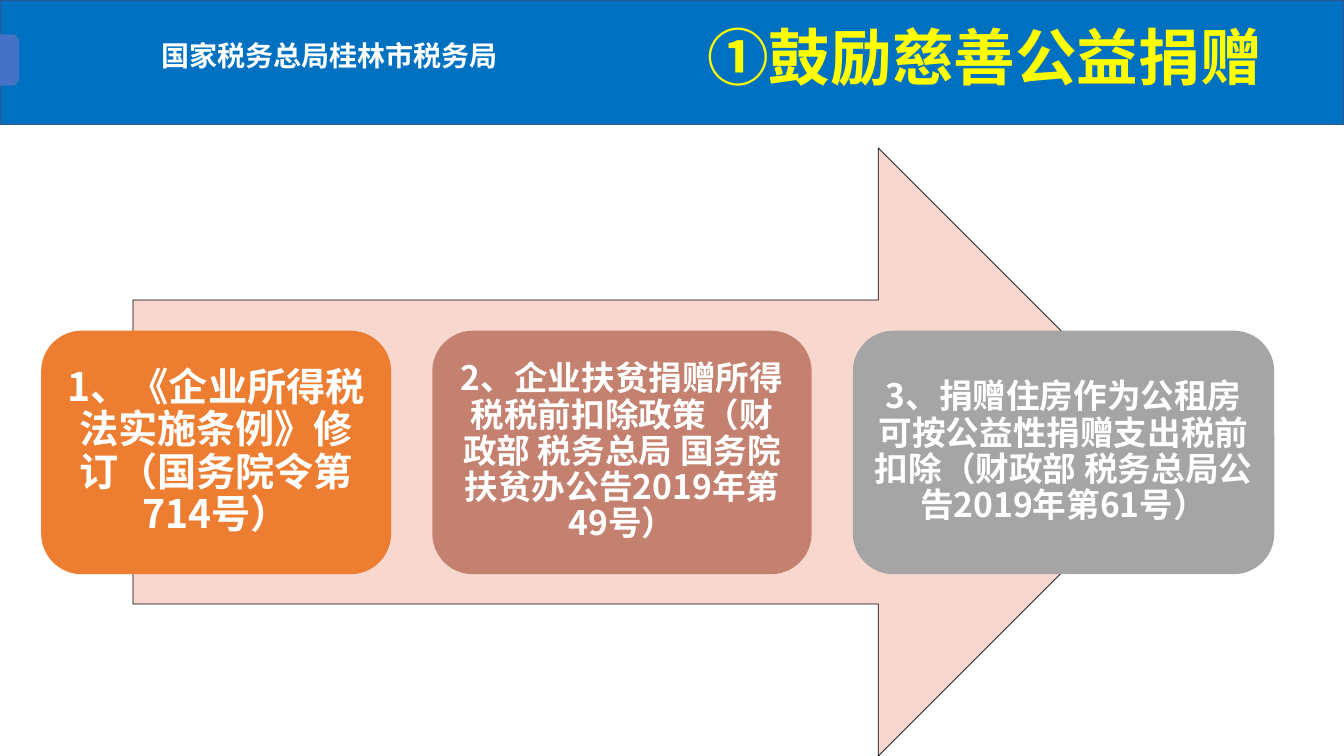
import math
from dataclasses import dataclass

from pptx import Presentation
from pptx.dml.color import RGBColor
from pptx.enum import shapes, text
from pptx.oxml import ns
from pptx.oxml import xmlchemy as xml
from pptx.util import Pt

FONT = "Noto Sans CJK SC"


@dataclass
class Box:
    left: float
    top: float
    width: float
    height: float

    def emu(self) -> tuple:
        return Pt(self.left), Pt(self.top), Pt(self.width), Pt(self.height)


@dataclass
class Policy:
    wording: str
    width: float
    size: float
    fill: str


POLICIES = [
    Policy("1、《企业所得税法实施条例》修订（国务院令第714号）", 250, 28, "ED7D31"),
    Policy("2、企业扶贫捐赠所得税税前扣除政策（财政部 税务总局 国务院扶贫办公告2019年第49号）",
           271, 24, "C48170"),
    Policy("3、捐赠住房作为公租房可按公益性捐赠支出税前扣除（财政部 税务总局公告2019年第61号）",
           301, 24, "A5A5A5"),
]
CARD_GAP = 29.4
CARD_TOP = 236.2
CARD_HEIGHT = 174


def color(value: str) -> RGBColor:
    return RGBColor.from_string(value)


def paint(shape, fill: str, line: str = "", weight: float = 0) -> None:
    shape.shadow.inherit = False
    shape.fill.solid()
    shape.fill.fore_color.rgb = color(fill)
    if line:
        shape.line.color.rgb = color(line)
        shape.line.width = Pt(weight)
    else:
        shape.line.fill.background()


def add_preset(slide, kind, box: Box, fill: str, line: str = "", weight: float = 0):
    shape = slide.shapes.add_shape(kind, *box.emu())
    paint(shape, fill, line, weight)
    return shape


def write(shape, wording: str, size: float, ink: str, align, spacing: float = 1,
          inset: tuple = (7.2, 3.6), wrap: bool = True) -> None:
    frame = shape.text_frame
    frame.word_wrap = wrap
    frame.auto_size = text.MSO_AUTO_SIZE.NONE
    frame.vertical_anchor = text.MSO_ANCHOR.MIDDLE
    frame.margin_left = frame.margin_right = Pt(inset[0])
    frame.margin_top = frame.margin_bottom = Pt(inset[1])
    paragraph = frame.paragraphs[0]
    paragraph.alignment = align
    paragraph.line_spacing = spacing
    paragraph.space_before = Pt(0)
    run = paragraph.add_run()
    run.text = wording
    run.font.size = Pt(size)
    run.font.bold = True
    run.font.name = FONT
    run.font.color.rgb = color(ink)
    east_asian = xml.OxmlElement("a:ea")
    east_asian.set("typeface", FONT)
    run.font._element.find(ns.qn("a:latin")).addnext(east_asian)


def add_tab(slide, box: Box, radius: float, fill: str) -> None:
    right, bottom = box.left + box.width, box.top + box.height
    outline = []
    for center_y, start in ((box.top + radius, -90), (bottom - radius, 0)):
        for angle in range(start, start + 91, 15):
            turn = math.radians(angle)
            outline.append((Pt(right - radius + radius * math.cos(turn)),
                            Pt(center_y + radius * math.sin(turn))))
    builder = slide.shapes.build_freeform(Pt(box.left), Pt(box.top))
    builder.add_line_segments(outline + [(Pt(box.left), Pt(bottom))], close=True)
    paint(builder.convert_to_shape(), fill)


def add_policies(slide) -> None:
    left = CARD_GAP
    for policy in POLICIES:
        card = add_preset(slide, shapes.MSO_SHAPE.ROUNDED_RECTANGLE,
                          Box(left, CARD_TOP, policy.width, CARD_HEIGHT), policy.fill)
        margin = 0.3 * policy.size
        write(card, policy.wording, policy.size, "FFFFFF", text.PP_ALIGN.CENTER,
              spacing=0.9, inset=(margin, margin))
        left += policy.width + CARD_GAP


def main() -> None:
    deck = Presentation()
    deck.slide_width, deck.slide_height = Pt(960), Pt(540)
    slide = deck.slides.add_slide(deck.slide_layouts[5])

    banner = add_preset(slide, shapes.MSO_SHAPE.RECTANGLE, Box(0, 0, 960, 88.8),
                        "0070C0", "325491", 1)
    title = slide.shapes.title
    banner.element.addnext(title.element)
    title.left, title.top, title.width, title.height = Box(496, 9.4, 414.8, 60.5).emu()
    write(title, "①鼓励慈善公益捐赠", 44, "FFFF00", text.PP_ALIGN.CENTER,
          inset=(7.2, 0), wrap=False)

    office = slide.shapes.add_textbox(*Box(108, 23.8, 356.4, 31.7).emu())
    write(office, "国家税务总局桂林市税务局", 20, "FFFFFF", text.PP_ALIGN.LEFT)
    add_tab(slide, Box(0, 24.5, 13.5, 36.7), 5, "4472C4")

    add_preset(slide, shapes.MSO_SHAPE.RIGHT_ARROW, Box(95, 105.8, 749.5, 434.2),
               "F8D7CE", "000000", 0.5)
    add_policies(slide)
    deck.save("out.pptx")


if __name__ == "__main__":
    main()
